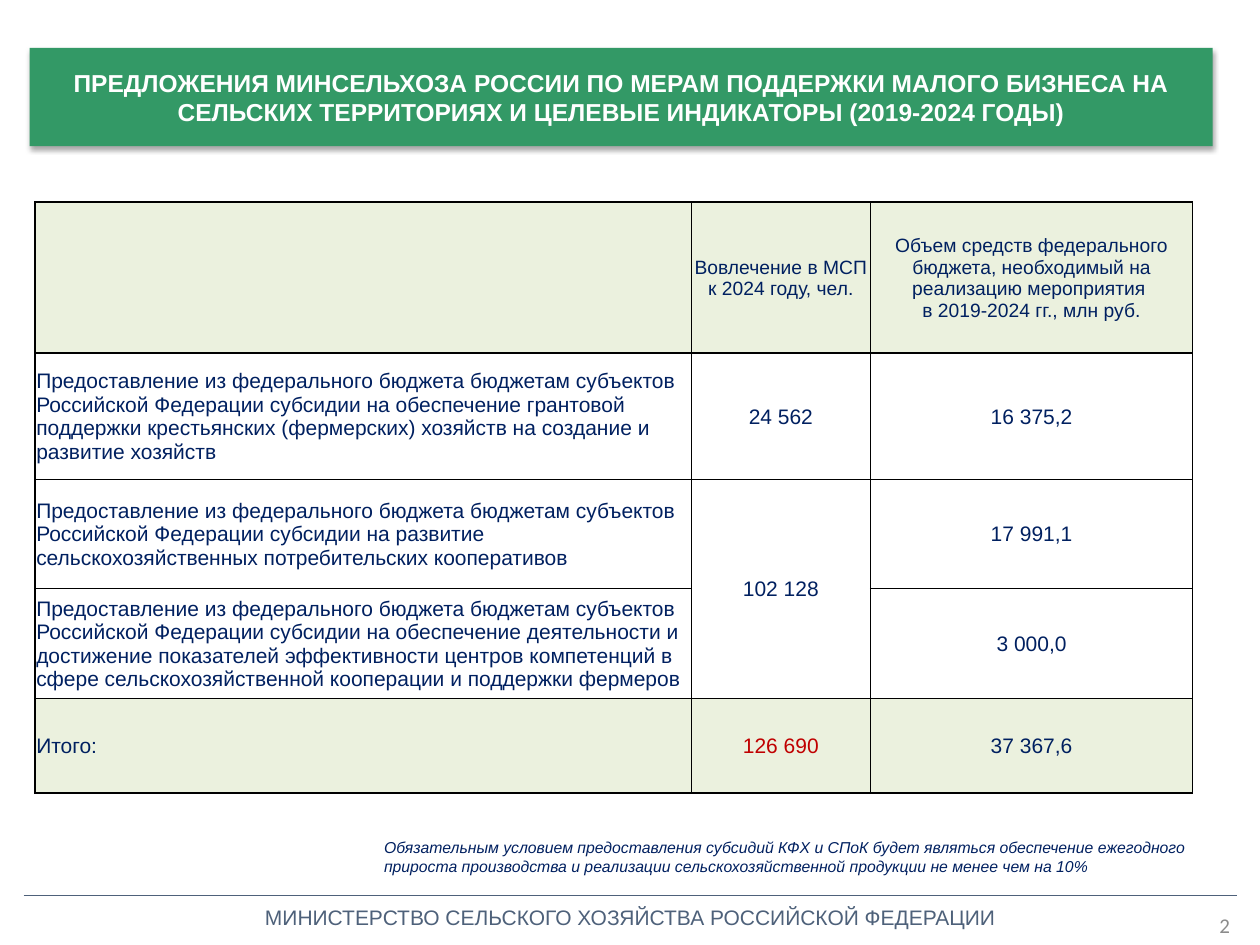
"""Build the slide on small rural business support measures and target indicators."""
import pptx
import pptx.dml.color
import pptx.enum.shapes
import pptx.enum.text
import pptx.oxml
import pptx.oxml.ns
import pptx.util

Pt = pptx.util.Pt
RGBColor = pptx.dml.color.RGBColor
ALIGN = pptx.enum.text.PP_ALIGN
MIDDLE = pptx.enum.text.MSO_ANCHOR.MIDDLE
NS = pptx.oxml.ns.nsdecls("a")

GREEN = RGBColor(0x33, 0x99, 0x66)
PALE = RGBColor(0xEB, 0xF1, 0xDE)
NAVY = RGBColor(0x00, 0x20, 0x60)
RED = RGBColor(0xC0, 0x00, 0x00)
SLATE = RGBColor(0x4E, 0x61, 0x7A)
GRAY = RGBColor(0x8C, 0x8C, 0x8C)
WHITE = RGBColor(0xFF, 0xFF, 0xFF)

TITLE = ("ПРЕДЛОЖЕНИЯ МИНСЕЛЬХОЗА РОССИИ ПО МЕРАМ ПОДДЕРЖКИ МАЛОГО БИЗНЕСА НА "
         "СЕЛЬСКИХ ТЕРРИТОРИЯХ И ЦЕЛЕВЫЕ ИНДИКАТОРЫ (2019-2024 ГОДЫ)")
MINISTRY = "МИНИСТЕРСТВО СЕЛЬСКОГО ХОЗЯЙСТВА РОССИЙСКОЙ ФЕДЕРАЦИИ"
NOTE = ("Обязательным условием предоставления субсидий КФХ и СПоК будет являться "
        "обеспечение ежегодного прироста производства и реализации "
        "сельскохозяйственной продукции не менее чем на 10%")
SUBSIDY = ("Предоставление из федерального бюджета бюджетам субъектов "
           "Российской Федерации субсидии на ")
ROWS = [
    ("", "Вовлечение в МСП к 2024 году, чел.",
     "Объем средств федерального бюджета, необходимый на реализацию "
     "мероприятия \vв 2019-2024 гг., млн руб."),
    (SUBSIDY + "обеспечение грантовой поддержки крестьянских (фермерских) "
     "хозяйств на создание и развитие хозяйств", "24 562", "16 375,2"),
    (SUBSIDY + "развитие сельскохозяйственных потребительских кооперативов",
     "102 128", "17 991,1"),
    (SUBSIDY + "обеспечение деятельности и достижение показателей эффективности "
     "центров компетенций в сфере сельскохозяйственной кооперации и поддержки "
     "фермеров", "", "3 000,0"),
    ("Итого:", "126 690", "37 367,6"),
]
COL_WIDTHS = [375.12, 102.24, 184.32]
ROW_HEIGHTS = [86.4, 72, 62.64, 62.64, 54]


def set_text(tf, text, size, color, align=ALIGN.LEFT, name="Arial", bold=False, italic=False):
    """Fill a text frame with one uniformly formatted paragraph."""
    tf.word_wrap = True
    p = tf.paragraphs[0]
    p.text = text
    p.alignment = align
    p.font.name, p.font.size = name, Pt(size)
    p.font.bold, p.font.italic = bold, italic
    p.font.color.rgb = color


def add_text(slide, box, *args, **kwargs):
    """Add a text box and return its text frame."""
    tf = slide.shapes.add_textbox(*map(Pt, box)).text_frame
    set_text(tf, *args, **kwargs)
    return tf


def add_banner(slide, box, text):
    """Add the green title banner with a soft shadow."""
    sp = slide.shapes.add_shape(pptx.enum.shapes.MSO_SHAPE.RECTANGLE, *map(Pt, box))
    sp.fill.solid()
    sp.fill.fore_color.rgb = GREEN
    sp.line.fill.background()
    sp._element.spPr.append(pptx.oxml.parse_xml(
        f'<a:effectLst {NS}><a:outerShdw blurRad="{Pt(3.1)}" dist="{Pt(1.8)}" '
        'dir="5400000" rotWithShape="0"><a:srgbClr val="000000">'
        '<a:alpha val="35000"/></a:srgbClr></a:outerShdw></a:effectLst>'))
    set_text(sp.text_frame, text, 14, WHITE, ALIGN.CENTER, bold=True)
    sp.text_frame.vertical_anchor = MIDDLE


def add_rule(slide, x1, x2, y):
    """Add the thin horizontal footer line."""
    line = slide.shapes.add_connector(
        pptx.enum.shapes.MSO_CONNECTOR.STRAIGHT, Pt(x1), Pt(y), Pt(x2), Pt(y))
    line.line.color.rgb = SLATE
    line.line.width = Pt(1)
    line._element.spPr.append(pptx.oxml.parse_xml(f"<a:effectLst {NS}/>"))


def set_borders(cell, widths):
    """Draw black cell borders, given a width for each side."""
    tc_pr = cell._tc.get_or_add_tcPr()
    for side, width in widths.items():
        tc_pr.append(pptx.oxml.parse_xml(
            f'<a:ln{side} {NS} w="{Pt(width)}"><a:solidFill>'
            f'<a:srgbClr val="000000"/></a:solidFill></a:ln{side}>'))


def style_cell(cell, row, col):
    """Set the margins, borders and fill that follow from a cell's place."""
    last = len(ROWS) - 1
    cell.margin_left = cell.margin_right = cell.margin_top = Pt(0.72)
    cell.margin_bottom = 0
    cell.vertical_anchor = MIDDLE
    set_borders(cell, {"L": 1 if col == 0 else 0.5, "R": 0.5,
                       "T": 1 if row in (0, 1) else 0.5,
                       "B": 1 if row in (0, last) else 0.5})
    if row in (0, last):
        cell.fill.solid()
        cell.fill.fore_color.rgb = PALE
    else:
        cell.fill.background()


def add_measures_table(slide, left, top):
    """Add the table of measures, people involved and funding."""
    table = slide.shapes.add_table(
        len(ROWS), len(COL_WIDTHS), Pt(left), Pt(top),
        Pt(sum(COL_WIDTHS)), Pt(sum(ROW_HEIGHTS))).table
    table.first_row = table.horz_banding = False
    for column, width in zip(table.columns, COL_WIDTHS):
        column.width = Pt(width)
    for row, height in zip(table.rows, ROW_HEIGHTS):
        row.height = Pt(height)
    for r, texts in enumerate(ROWS):
        for c, text in enumerate(texts):
            cell = table.cell(r, c)
            style_cell(cell, r, c)
            if text:
                set_text(cell.text_frame, text, 11 if r == 0 else 12,
                         RED if (r, c) == (len(ROWS) - 1, 1) else NAVY,
                         ALIGN.CENTER if c else ALIGN.LEFT)
    table.cell(2, 1).merge(table.cell(3, 1))


def main():
    """Build and save the slide."""
    prs = pptx.Presentation()
    prs.slide_width, prs.slide_height = Pt(720), Pt(540)
    slide = prs.slides.add_slide(prs.slide_layouts[6])
    add_text(slide, (28, 513.4, 664.6, 21.6), MINISTRY, 12, SLATE, ALIGN.CENTER)
    add_rule(slide, 13.5, 707, 511.7)
    number = add_text(slide, (653, 514, 57, 29), "2", 12, GRAY, ALIGN.RIGHT, "Calibri")
    number.vertical_anchor = MIDDLE
    add_banner(slide, (17, 27.3, 676, 56.2), TITLE)
    add_measures_table(slide, 20, 115.4)
    add_text(slide, (212.4, 475.2, 480.2, 29), NOTE, 9, NAVY, italic=True)
    prs.save("out.pptx")


if __name__ == "__main__":
    main()
